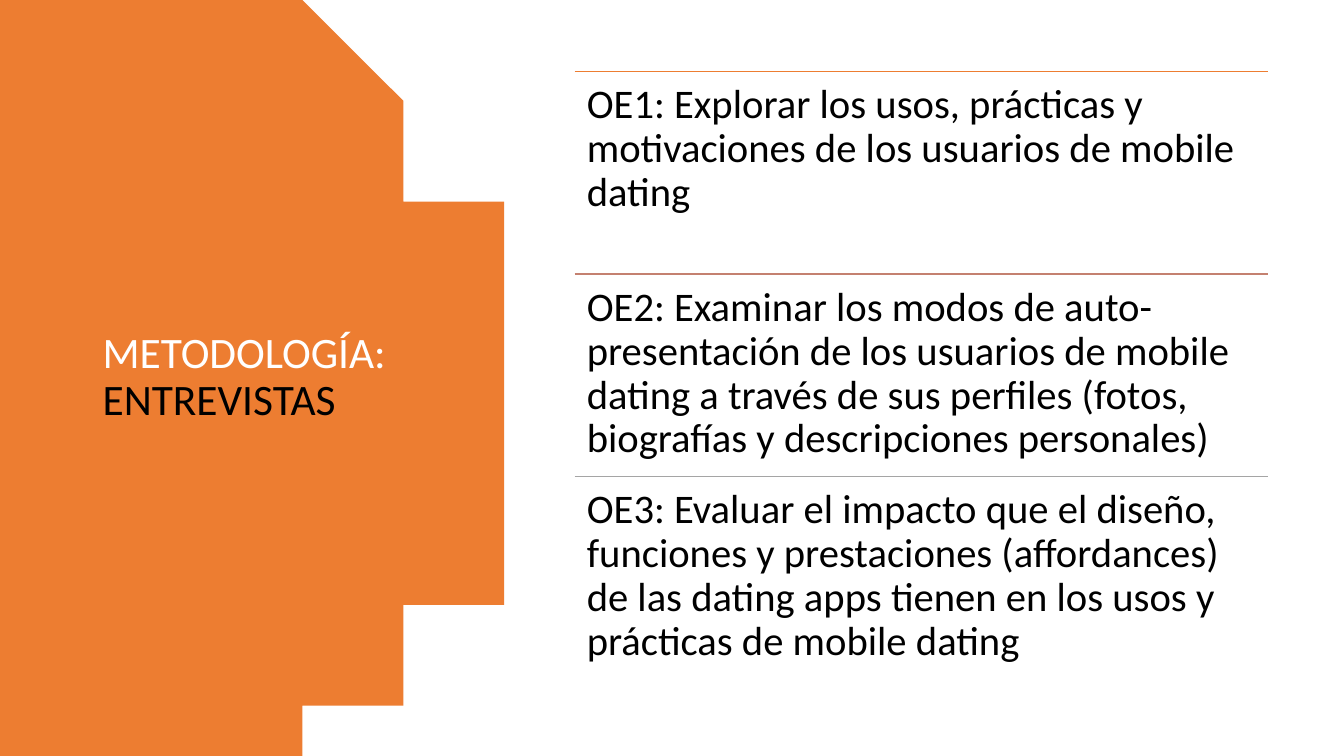
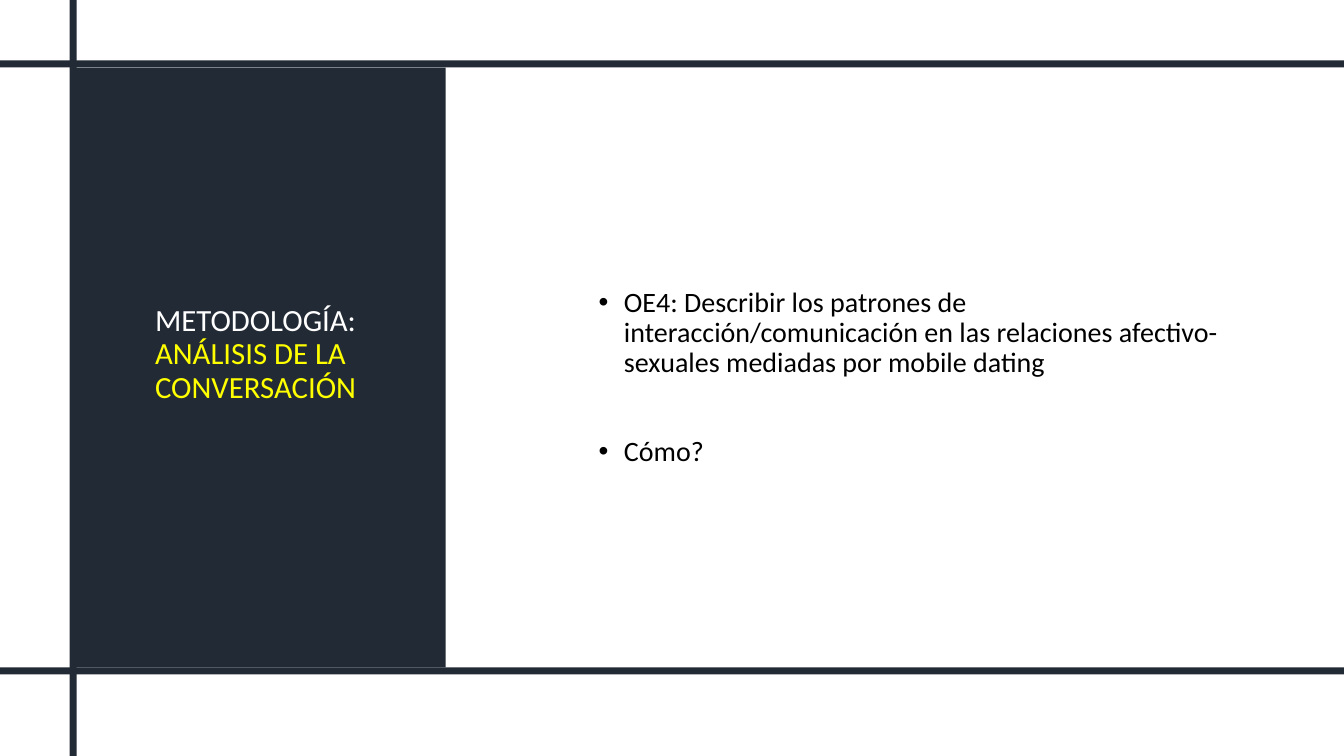
from lxml import etree
from pptx import Presentation
from pptx.dml.color import RGBColor
from pptx.enum import shapes, text
from pptx.oxml import ns
from pptx.util import Inches, Pt

FONT = "Calibri"
WHITE, BLACK, YELLOW = "FFFFFF", "000000", "FFFF00"
ORANGE, TERRACOTTA, GREY, NAVY = "ED7D31", "C48170", "A5A5A5", "222A35"
WIDTH, HEIGHT = 13.33, 7.5


def paint(part, color):
    """Give a fill, line or font format one solid colour."""
    if hasattr(part, "solid"):
        part.solid()
        part.fore_color.rgb = RGBColor.from_string(color)
    else:
        part.color.rgb = RGBColor.from_string(color)


def add_text(slide, paragraphs, box, size, anchor="MIDDLE", inset=(0.1, 0.05),
             gap=0, bullet=False):
    """Add a text box; each paragraph is a list of (text, colour) runs."""
    frame = slide.shapes.add_textbox(*map(Inches, box)).text_frame
    frame.word_wrap = True
    frame.vertical_anchor = text.MSO_ANCHOR[anchor]
    frame.margin_left = frame.margin_right = Inches(inset[0])
    frame.margin_top = frame.margin_bottom = Inches(inset[1])
    for index, runs in enumerate(paragraphs):
        paragraph = frame.add_paragraph() if index else frame.paragraphs[0]
        paragraph.line_spacing = 0.9
        if index:
            paragraph.space_before = Pt(gap)
        if bullet:
            props = paragraph._p.get_or_add_pPr()
            props.set("marL", str(Inches(0.25)))
            props.set("indent", str(Inches(-0.25)))
            etree.SubElement(props, ns.qn("a:buFont")).set("typeface", "Arial")
            etree.SubElement(props, ns.qn("a:buChar")).set("char", "•")
        for words, color in runs:
            run = paragraph.add_run()
            run.text = words
            run.font.name, run.font.size = FONT, Pt(size)
            paint(run.font, color)


deck = Presentation()
deck.slide_width, deck.slide_height = Inches(WIDTH), Inches(HEIGHT)
interviews, conversation = [deck.slides.add_slide(deck.slide_layouts[6])
                            for _ in range(2)]

# Slide 1: orange panel with a round right edge, sampled from a Bézier curve
curve = [(2.83, 0), (4.09, 0.77), (4.93, 2.16), (4.93, HEIGHT / 2)]
STEPS = 60
upper = []
for step in range(STEPS + 1):
    t = step / STEPS
    weights = ((1 - t) ** 3, 3 * t * (1 - t) ** 2, 3 * t ** 2 * (1 - t), t ** 3)
    upper.append(tuple(sum(w * point[axis] for w, point in zip(weights, curve))
                       for axis in (0, 1)))
lower = [(x, HEIGHT - y) for x, y in reversed(upper[:-1])]
outline = interviews.shapes.build_freeform(0, 0, scale=Inches(1))
outline.add_line_segments(upper + lower + [(0, HEIGHT)], close=True)
panel = outline.convert_to_shape()
panel.shadow.inherit = False
paint(panel.fill, ORANGE)
panel.line.fill.background()

add_text(interviews, [[("METODOLOGÍA: ", WHITE), ("ENTREVISTAS", BLACK)]],
         (0.92, 0.7, 3.23, 6.09), 31)

# Slide 1: objectives, each under its rule
objectives = [
    (ORANGE, "OE1: Explorar los usos, prácticas y motivaciones de los usuarios "
             "de mobile dating"),
    (TERRACOTTA, "OE2: Examinar los modos de auto-presentación de los usuarios de "
                 "mobile dating a través de sus perfiles (fotos, biografías y "
                 "descripciones personales)"),
    (GREY, "OE3: Evaluar el impacto que el diseño, funciones y prestaciones "
           "(affordances) de las dating apps tienen en los usos y prácticas de "
           "mobile dating"),
]
LEFT, TOP, ROW_WIDTH, ROW_HEIGHT = 5.7, 0.71, 6.88, 2.01
for row, (color, objective) in enumerate(objectives):
    y = TOP + row * ROW_HEIGHT
    rule = interviews.shapes.add_connector(
        shapes.MSO_CONNECTOR.STRAIGHT,
        *map(Inches, (LEFT, y, LEFT + ROW_WIDTH, y)))
    paint(rule.line, color)
    rule.line.width = Pt(1)
    etree.SubElement(rule._element.spPr, ns.qn("a:effectLst"))
    add_text(interviews, [[(objective, BLACK)]], (LEFT, y, ROW_WIDTH, ROW_HEIGHT),
             29, anchor="TOP", inset=(0.12, 0.12))

# Slide 2: navy panel framed by three bars
BAR = 0.07
blocks = [
    (0.72, 0.67, 3.7, 5.95),
    (0, 6.62, WIDTH, BAR),
    (0.69, 0, BAR, HEIGHT),
    (0, 0.6, WIDTH, BAR),
]
for box in blocks:
    block = conversation.shapes.add_shape(shapes.MSO_SHAPE.RECTANGLE,
                                          *map(Inches, box))
    block.shadow.inherit = False
    paint(block.fill, NAVY)
    block.line.fill.background()

add_text(conversation,
         [[("METODOLOGÍA: ", WHITE), ("ANÁLISIS DE LA CONVERSACIÓN", YELLOW)]],
         (1.44, 1.1, 2.22, 4.84), 22)

# Slide 2: objective and question
add_text(conversation,
         [[("OE4: Describir los patrones de interacción/comunicación en las "
            "relaciones afectivo-sexuales mediadas por mobile dating", BLACK)],
          [("Cómo?", BLACK)]],
         (5.84, 1.41, 6.34, 4.68), 20, gap=42, bullet=True)

deck.save("out.pptx")
